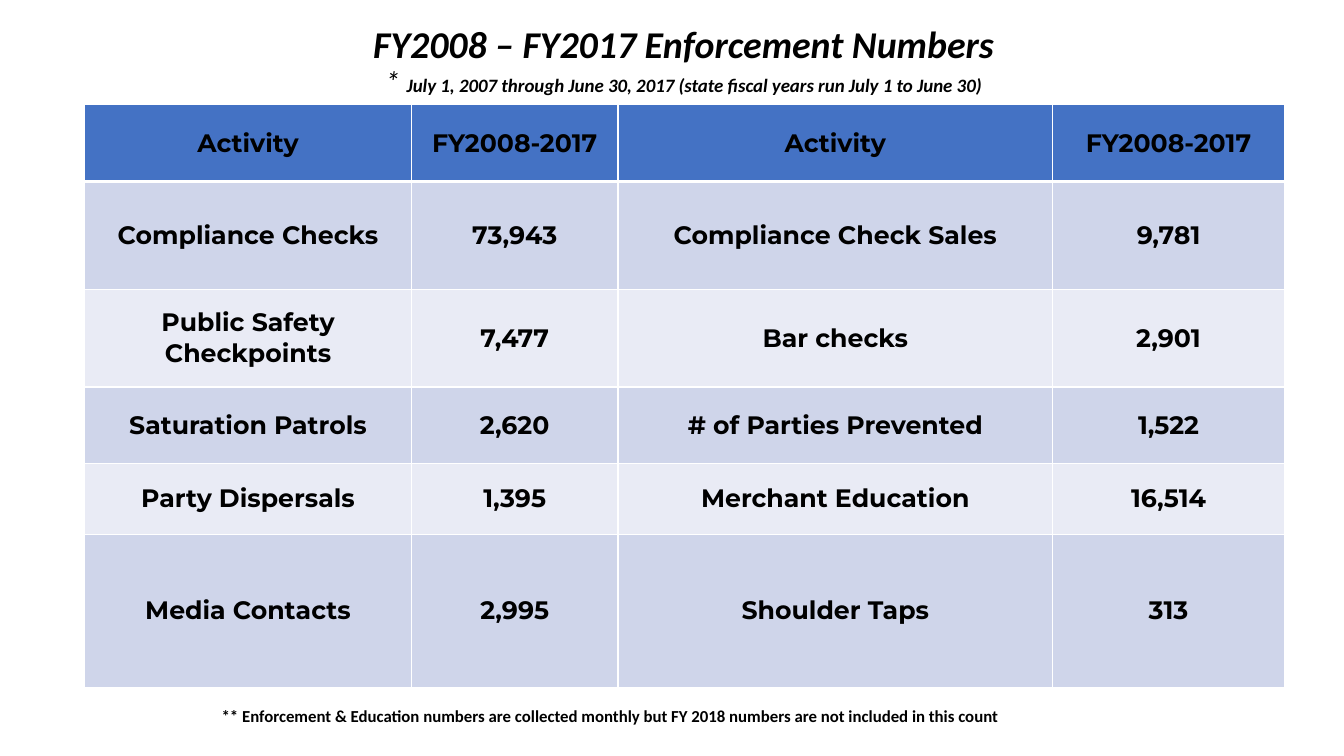
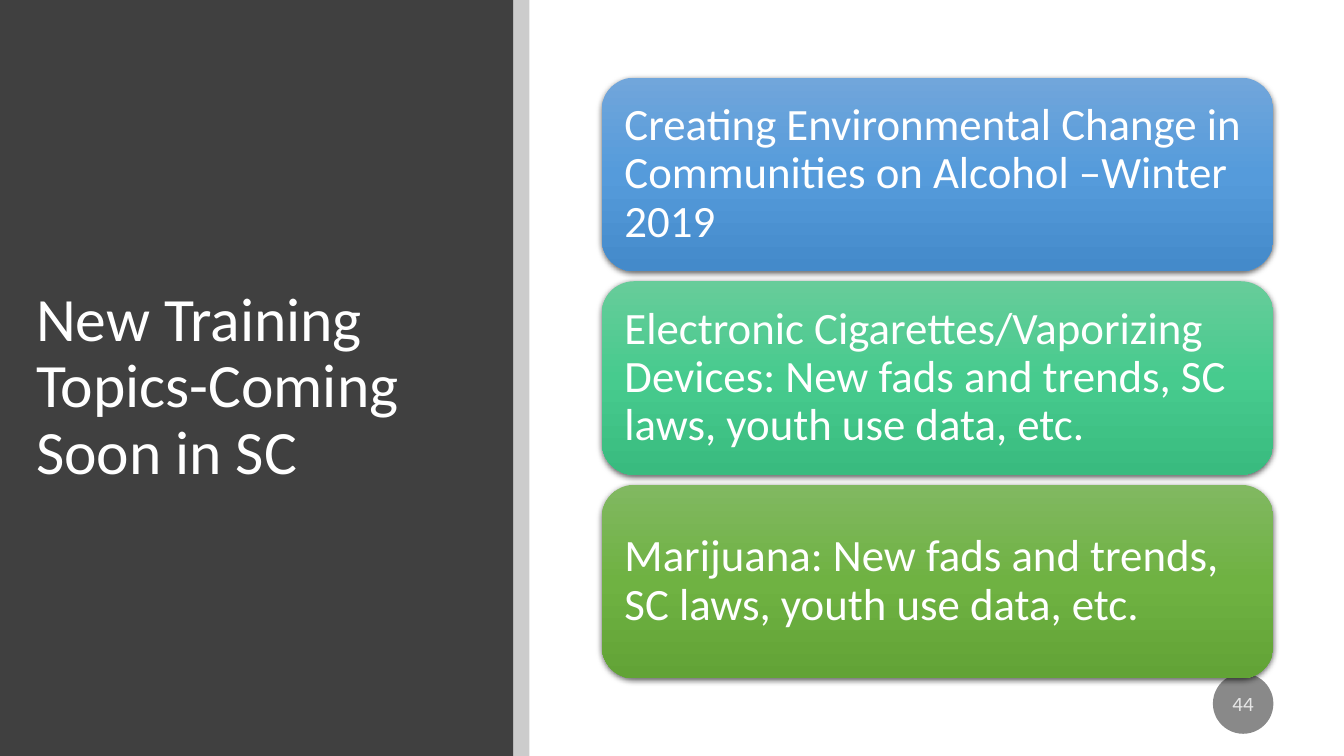
from lxml.etree import SubElement
from pptx import Presentation
from pptx.dml.color import RGBColor
from pptx.enum.shapes import MSO_SHAPE as Shape
from pptx.enum.text import MSO_ANCHOR as Anchor, PP_ALIGN as Align
from pptx.oxml.ns import qn
from pptx.util import Emu, Pt

PX = 9144
COLORS = {
    "black": "000000",
    "white": "FFFFFF",
    "header": "4472C4",
    "odd_row": "CFD5EA",
    "even_row": "E9EBF5",
    "panel": "404040",
    "badge": "898989",
}
BLUE = ("71A6DB", "559BDB", "448ACA")
TEAL = ("67CC9A", "47CB8E", "39BB7F")
GREEN = ("81B861", "6FB242", "62A336")

ACTIVITIES = [
    ("Activity", "FY2008-2017", "Activity", "FY2008-2017"),
    ("Compliance Checks", "73,943", "Compliance Check Sales", "9,781"),
    ("Public Safety Checkpoints", "7,477", "Bar checks", "2,901"),
    ("Saturation Patrols", "2,620", "# of Parties Prevented", "1,522"),
    ("Party Dispersals", "1,395", "Merchant Education", "16,514"),
    ("Media Contacts", "2,995", "Shoulder Taps", "313"),
]
TOPICS = [
    ("Creating Environmental Change in Communities on Alcohol –Winter 2019", BLUE),
    ("Electronic Cigarettes/Vaporizing Devices: New fads and trends, SC laws, youth use data, etc.", TEAL),
    ("Marijuana: New fads and trends, SC laws, youth use data, etc.", GREEN),
]


def px(length):
    return Emu(length * PX)


def rgb(name):
    return RGBColor.from_string(COLORS[name])


def add_alpha(parent, percent):
    SubElement(parent, qn("a:alpha"), val=str(percent * 1000))


class SlideWriter:
    font = "Calibri"
    table_font = "Montserrat"
    title_spacing = 0.9

    def __init__(self, width, height):
        self.deck = Presentation()
        self.deck.slide_width, self.deck.slide_height = px(width), px(height)
        self.page = None

    def new_page(self):
        self.page = self.deck.slides.add_slide(self.deck.slide_layouts[6])

    def span(self, para, text, size, color="black", bold=False, italic=False, font=None):
        span = para.add_run()
        span.text = text
        span.font.name = font or self.font
        span.font.size = Pt(size)
        span.font.bold = bold
        span.font.italic = italic
        span.font.color.rgb = rgb(color)
        return span

    def frame(self, shape, anchor=Anchor.MIDDLE, align=Align.LEFT, spacing=1.0, inset=None):
        frame = shape.text_frame
        frame.word_wrap = True
        frame.vertical_anchor = anchor
        if inset is not None:
            frame.margin_left = frame.margin_right = px(inset)
            frame.margin_top = frame.margin_bottom = px(inset)
        para = frame.paragraphs[0]
        para.alignment = align
        para.line_spacing = spacing
        return para

    def text_box(self, at, **layout):
        box = self.page.shapes.add_textbox(*map(px, at))
        return self.frame(box, **layout)

    def title(self, at, align=Align.LEFT):
        return self.text_box(at, align=align, spacing=self.title_spacing)

    def shape(self, kind, at, color=None, opacity=None):
        shape = self.page.shapes.add_shape(kind, *map(px, at))
        shape.shadow.inherit = False
        shape.line.fill.background()
        if color:
            shape.fill.solid()
            shape.fill.fore_color.rgb = rgb(color)
        if opacity is not None:
            add_alpha(shape._element.spPr.find(".//" + qn("a:srgbClr")), opacity)
        return shape

    def badge(self, at, text):
        circle = self.shape(Shape.OVAL, at, "badge")
        para = self.frame(circle, align=Align.CENTER, inset=0)
        span = self.span(para, text, 15, "white")
        add_alpha(span._r.find(".//" + qn("a:srgbClr")), 80)

    def card(self, at, text, gradient):
        card = self.shape(Shape.ROUNDED_RECTANGLE, at)
        card.fill.gradient()
        card.fill.gradient_angle = 270
        properties = card._element.spPr
        stops = properties.find(".//" + qn("a:gsLst"))
        for stop in list(stops):
            stops.remove(stop)
        for index, color in enumerate(gradient):
            stop = SubElement(stops, qn("a:gs"), pos=str(index * 50000))
            SubElement(stop, qn("a:srgbClr"), val=color)
        shadow = SubElement(
            properties.find(qn("a:effectLst")), qn("a:outerShdw"),
            blurRad=str(Pt(4.5)), dist=str(Pt(1.5)), dir="5400000", rotWithShape="0",
        )
        add_alpha(SubElement(shadow, qn("a:srgbClr"), val=COLORS["black"]), 63)
        para = self.frame(card, spacing=0.9, inset=13)
        self.span(para, text, 32, "white")

    def cell_border(self, cell, side, width):
        line = SubElement(cell._tc.get_or_add_tcPr(), qn("a:" + side), w=str(Pt(width)))
        fill = SubElement(line, qn("a:solidFill"))
        SubElement(fill, qn("a:srgbClr"), val=COLORS["white"])

    def table_cell(self, cell, text, row):
        widths = {"lnL": 1, "lnR": 1, "lnT": 3 if row == 1 else 1, "lnB": 3 if row == 0 else 1}
        for side, width in widths.items():
            self.cell_border(cell, side, width)
        cell.fill.solid()
        cell.fill.fore_color.rgb = rgb("header" if row == 0 else "odd_row" if row % 2 else "even_row")
        cell.vertical_anchor = Anchor.MIDDLE
        cell.margin_left = cell.margin_right = px(6)
        cell.margin_top = cell.margin_bottom = px(4)
        para = cell.text_frame.paragraphs[0]
        para.alignment = Align.CENTER
        self.span(para, text, 18, bold=True, font=self.table_font)

    def table(self, left, top, widths, heights, rows):
        area = map(px, (left, top, sum(widths), sum(heights)))
        table = self.page.shapes.add_table(len(rows), len(widths), *area).table
        for column, width in zip(table.columns, widths):
            column.width = px(width)
        for row, (height, texts) in enumerate(zip(heights, rows)):
            table.rows[row].height = px(height)
            for column, text in enumerate(texts):
                self.table_cell(table.cell(row, column), text, row)


def enforcement_page(writer):
    writer.new_page()
    para = writer.title((244, 15, 868, 94), align=Align.CENTER)
    writer.span(para, "FY2008 – FY2017 Enforcement Numbers", 27, bold=True, italic=True)
    para.add_line_break()
    writer.span(para, "* ", 21, italic=True)
    writer.span(
        para, "July 1, 2007 through June 30, 2017 (state fiscal years run July 1 to June 30)",
        13.5, bold=True, italic=True,
    )
    writer.table(84, 104, (324, 205, 431, 230), (76, 107, 97, 76, 70, 152), ACTIVITIES)
    note = writer.text_box((210, 695, 936, 30), anchor=Anchor.TOP)
    writer.span(
        note, "** Enforcement & Education numbers are collected monthly "
        "but FY 2018 numbers are not included in this count", 12, bold=True,
    )


def training_page(writer):
    writer.new_page()
    writer.shape(Shape.RECTANGLE, (0, 0, 509, 750), "panel")
    para = writer.title((26, 89, 430, 591))
    writer.span(para, "New Training Topics-Coming Soon in SC", 44, "white")
    writer.shape(Shape.RECTANGLE, (509, 0, 16, 750), "black", opacity=20)
    writer.badge((1203, 668, 60, 60), "44")
    top, height, gap = 77, 192, 10
    for index, (text, gradient) in enumerate(TOPICS):
        writer.card((597, top + index * (height + gap), 666, height), text, gradient)


def main():
    writer = SlideWriter(1333, 750)
    enforcement_page(writer)
    training_page(writer)
    writer.deck.save("out.pptx")


if __name__ == "__main__":
    main()
